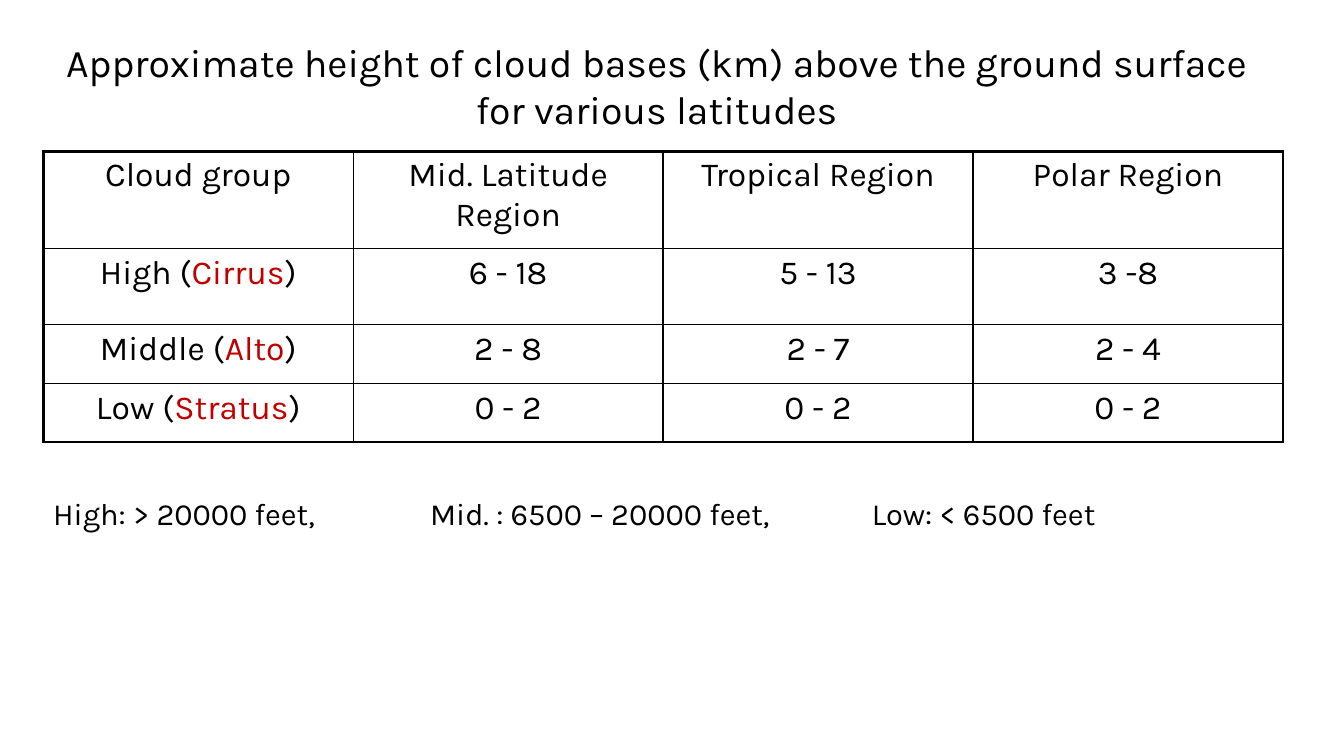
import dataclasses

import pptx
import pptx.dml.color
import pptx.enum.text
import pptx.oxml
import pptx.oxml.ns
import pptx.util

Cm = pptx.util.Cm
Pt = pptx.util.Pt


@dataclasses.dataclass(frozen=True)
class Theme:
    font: str = "Karla"
    ink: str = "000000"
    accent: str = "C00000"
    title_size: float = 28
    table_size: float = 24
    note_size: float = 22
    inner_border: float = 1
    outer_border: float = 2.25


theme = Theme()


def add_run(paragraph, text, size, color=theme.ink):
    run = paragraph.add_run()
    run.text = text
    run.font.name = theme.font
    run.font.size = Pt(size)
    run.font.bold = False
    run.font.color.rgb = pptx.dml.color.RGBColor.from_string(color)


def add_border(cell, side, width):
    cell._tc.get_or_add_tcPr().append(pptx.oxml.parse_xml(
        f'<a:ln{side} {pptx.oxml.ns.nsdecls("a")} w="{int(Pt(width))}">'
        f'<a:solidFill><a:srgbClr val="{theme.ink}"/></a:solidFill>'
        f'<a:prstDash val="solid"/></a:ln{side}>'))


presentation = pptx.Presentation()
presentation.slide_width = Cm(33.87)
presentation.slide_height = Cm(19.05)
slide = presentation.slides.add_slide(presentation.slide_layouts[5])

left = Cm(1.09)
content_width = Cm(31.24)

title = slide.shapes.title
title.left, title.top, title.width, title.height = left, Cm(0.84), Cm(30.91), Cm(2.64)
title.text_frame.word_wrap = True
title.text_frame.auto_size = pptx.enum.text.MSO_AUTO_SIZE.NONE
title.text_frame.vertical_anchor = pptx.enum.text.MSO_ANCHOR.TOP
title_paragraph = title.text_frame.paragraphs[0]
title_paragraph.alignment = pptx.enum.text.PP_ALIGN.CENTER
add_run(title_paragraph,
        "Approximate height of cloud bases (km) above the ground surface for various latitudes",
        theme.title_size)

cloud_rows = [
    (["Cloud group"], ["Mid. Latitude Region"], ["Tropical Region"], ["Polar Region"]),
    (["High (", "Cirrus", ")"], ["6 - 18"], ["5 - 13"], ["3 -8"]),
    (["Middle (", "Alto", ")"], ["2 - 8"], ["2 - 7"], ["2 - 4"]),
    (["Low (", "Stratus", ")"], ["0 - 2"], ["0 - 2"], ["0 - 2"]),
]
row_heights = [2.46, 1.91, 1.48, 1.48]
last_row = len(cloud_rows) - 1
last_column = len(cloud_rows[0]) - 1

table = slide.shapes.add_table(last_row + 1, last_column + 1, left, Cm(3.81),
                               content_width, Cm(sum(row_heights))).table
table.first_row = False
table.horz_banding = False

for row_index, (height, row) in enumerate(zip(row_heights, cloud_rows)):
    table.rows[row_index].height = Cm(height)
    for column_index, parts in enumerate(row):
        cell = table.cell(row_index, column_index)
        paragraph = cell.text_frame.paragraphs[0]
        paragraph.alignment = pptx.enum.text.PP_ALIGN.CENTER
        for part_index, part in enumerate(parts):
            add_run(paragraph, part, theme.table_size,
                    theme.accent if part_index == 1 else theme.ink)
        outer_edges = {
            "L": column_index == 0,
            "R": column_index == last_column,
            "T": row_index == 0,
            "B": row_index == last_row,
        }
        for side, is_outer in outer_edges.items():
            add_border(cell, side, theme.outer_border if is_outer else theme.inner_border)
        cell.fill.background()

note = slide.shapes.add_textbox(left, Cm(12.34), content_width, Cm(1.19))
note.text_frame.word_wrap = True
note_paragraph = note.text_frame.paragraphs[0]
tab_stops = "".join(f'<a:tab pos="{int(Cm(stop))}" algn="l"/>' for stop in (9.5, 20.63))
note_paragraph._p.get_or_add_pPr().append(pptx.oxml.parse_xml(
    f'<a:tabLst {pptx.oxml.ns.nsdecls("a")}>{tab_stops}</a:tabLst>'))
add_run(note_paragraph,
        "High: > 20000 feet,\tMid. : 6500 – 20000 feet,\tLow: < 6500 feet",
        theme.note_size)

presentation.save("out.pptx")
